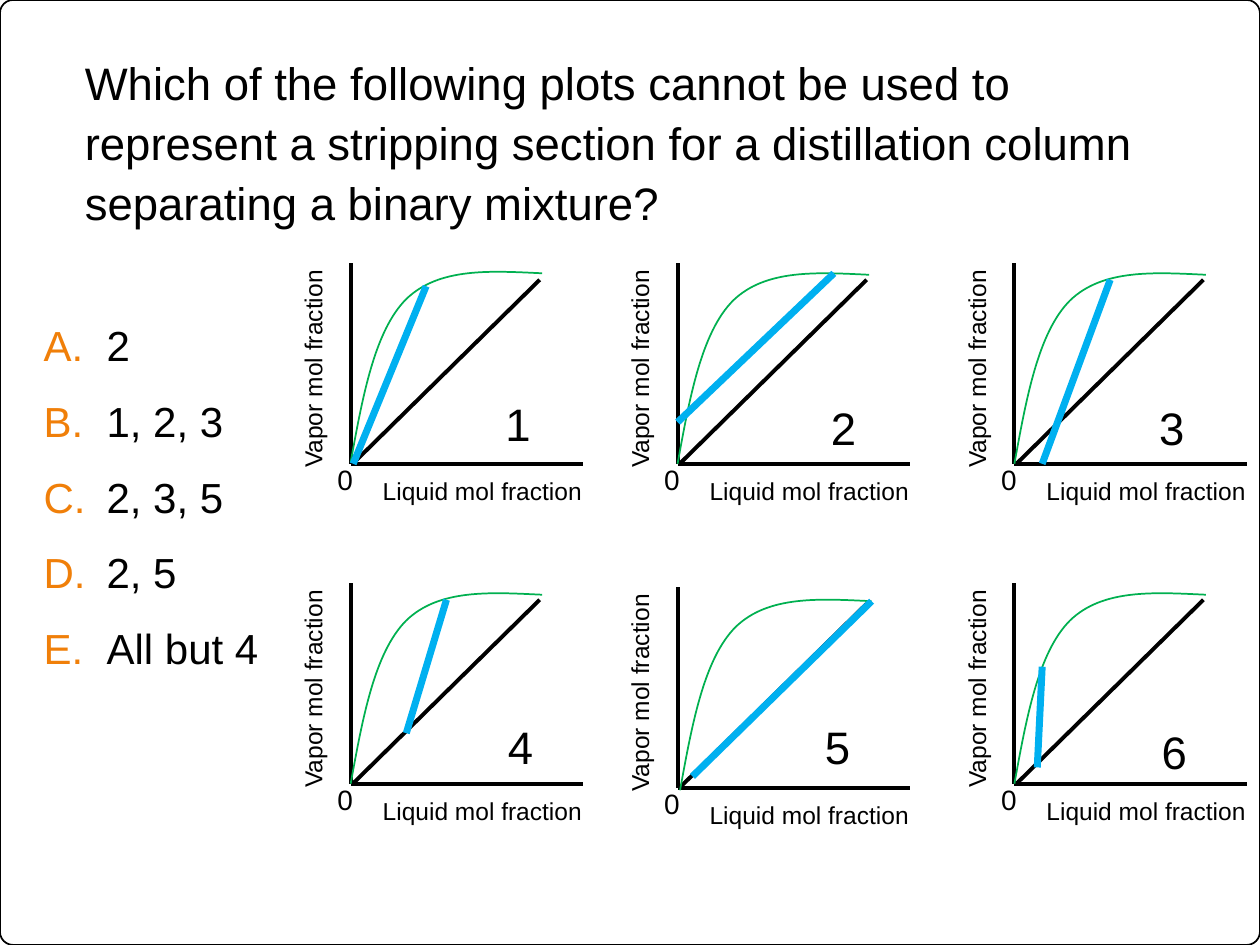
from dataclasses import dataclass

from lxml.etree import SubElement
from pptx import Presentation
from pptx.dml.color import RGBColor
from pptx.enum.shapes import MSO_CONNECTOR, MSO_SHAPE
from pptx.enum.text import MSO_AUTO_SIZE, PP_ALIGN
from pptx.oxml.ns import qn
from pptx.util import Cm, Pt

BLACK = RGBColor(0x00, 0x00, 0x00)
GREEN = RGBColor(0x00, 0xB0, 0x50)
BLUE = RGBColor(0x00, 0xB0, 0xF0)
ORANGE = RGBColor(0xF0, 0x7F, 0x09)
FONT = "Arial"

QUESTION = (
    "Which of the following plots cannot be used to represent a stripping "
    "section for a distillation column separating a binary mixture?"
)
ANSWERS = ["2", "1, 2, 3", "2, 3, 5", "2, 5", "All but 4"]
CURVE_TOP = -3.81
CURVE_SEGMENTS = [
    [(0.24, -1.32), (0.48, -2.65), (1.12, -3.29)],
    [(1.78, -3.93), (2.82, -3.86), (3.86, CURVE_TOP)],
]


@dataclass
class Plot:
    """One numbered plot; inner positions are in cm from its origin."""

    number: str
    origin: tuple
    line_top: tuple
    line_bottom: tuple
    number_at: tuple
    curve_at: tuple = (0, 0)


PLOTS = [
    Plot("1", (7.07, 9.35), (1.52, -3.58), (0.05, 0), (2.87, -1.5), (0, -0.03)),
    Plot("2", (13.66, 9.35), (3.15, -3.84), (0, -0.84), (2.84, -1.42)),
    Plot("3", (20.45, 9.35), (1.93, -3.71), (0.56, 0), (2.67, -1.42)),
    Plot("4", (7.07, 15.8), (1.93, -3.71), (1.12, -1.02), (2.92, -1.42)),
    Plot("5", (13.66, 15.88), (3.91, -3.76), (0.3, -0.23), (2.72, -1.5), (0.05, 0.05)),
    Plot("6", (20.45, 15.8), (0.56, -2.36), (0.46, -0.33), (2.72, -1.32)),
]


def shifted(origin, offset):
    """Return a point in cm at an offset from the origin."""
    return origin[0] + offset[0], origin[1] + offset[1]


def add_text(shapes, text, at, size, points, align=None, wrap=True):
    """Add a text box with black text that grows to fit and return it."""
    box = shapes.add_textbox(Cm(at[0]), Cm(at[1]), Cm(size[0]), Cm(size[1]))
    frame = box.text_frame
    frame.word_wrap = wrap
    frame.auto_size = MSO_AUTO_SIZE.SHAPE_TO_FIT_TEXT
    frame.text = text
    for paragraph in frame.paragraphs:
        paragraph.alignment = align
        for span in paragraph.runs:
            span.font.name = FONT
            span.font.size = Pt(points)
            span.font.color.rgb = BLACK
    return box


def add_line(shapes, start, end, color, width):
    """Add a straight line between two points in cm."""
    line = shapes.add_connector(
        MSO_CONNECTOR.STRAIGHT, Cm(start[0]), Cm(start[1]), Cm(end[0]), Cm(end[1])
    )
    line.line.color.rgb = color
    line.line.width = Pt(width)
    SubElement(line._element.spPr, qn("a:effectLst"))


def style_outline(shape, color):
    """Give a shape a thin outline without fill or shadow."""
    shape.shadow.inherit = False
    shape.fill.background()
    shape.line.color.rgb = color
    shape.line.width = Pt(1)


def add_frame(page):
    """Outline the whole slide with a rounded rectangle."""
    frame = page.shapes.add_shape(MSO_SHAPE.ROUNDED_RECTANGLE, 0, 0, Cm(25.4), Cm(19.05))
    frame.adjustments[0] = 0.014
    style_outline(frame, BLACK)


def set_spacing(box, spacing):
    """Fix the size of a box, remove its insets and set its line spacing."""
    frame = box.text_frame
    frame.auto_size = MSO_AUTO_SIZE.NONE
    frame.margin_left = frame.margin_right = frame.margin_top = frame.margin_bottom = 0
    for paragraph in frame.paragraphs:
        paragraph.line_spacing = spacing


def add_letters(box):
    """Number the paragraphs of a box with orange capital letters."""
    for paragraph in box.text_frame.paragraphs:
        properties = paragraph._p.get_or_add_pPr()
        properties.set("marL", str(Cm(1.27)))
        properties.set("indent", str(-Cm(1.27)))
        color = SubElement(properties, qn("a:buClr"))
        SubElement(color, qn("a:srgbClr"), val=str(ORANGE))
        SubElement(properties, qn("a:buFont"), typeface=FONT)
        SubElement(properties, qn("a:buAutoNum"), type="alphaUcPeriod")


def add_curve(shapes, origin):
    """Draw the equilibrium curve as two Bezier segments from the origin."""
    anchors = [shifted(origin, segment[-1]) for segment in CURVE_SEGMENTS]
    builder = shapes.build_freeform(Cm(origin[0]), Cm(origin[1]))
    builder.add_line_segments([(Cm(x), Cm(y)) for x, y in anchors], close=False)
    curve = builder.convert_to_shape()
    style_outline(curve, GREEN)
    straights = list(curve._element.iter(qn("a:lnTo")))
    for straight, segment in zip(straights, CURVE_SEGMENTS):
        outline = straight.getparent()
        bend = SubElement(outline, qn("a:cubicBezTo"))
        for x, y in segment:
            SubElement(bend, qn("a:pt"), x=str(Cm(x)), y=str(Cm(y - CURVE_TOP)))
        outline.remove(straight)


def add_axes(page, origin):
    """Add a group with both axes, their titles and the zero."""
    shapes = page.shapes.add_group_shape().shapes
    add_line(shapes, shifted(origin, (0, -4.04)), origin, BLACK, 2.25)
    add_line(shapes, origin, shifted(origin, (4.68, 0)), BLACK, 2.25)
    add_text(shapes, "Liquid mol fraction", shifted(origin, (0.05, 0.13)),
             (5.21, 0.86), 14, PP_ALIGN.CENTER)
    vapor = add_text(shapes, "Vapor mol fraction", shifted(origin, (-3.12, -2.34)),
                     (4.72, 0.86), 14, PP_ALIGN.CENTER)
    vapor.rotation = 270
    add_text(shapes, "0", shifted(origin, (-0.52, -0.15)), (0.84, 0.94), 16, wrap=False)


def add_plot(page, plot):
    """Add one plot with diagonal, curve, operating line and number."""
    shapes, origin = page.shapes, plot.origin
    add_line(shapes, shifted(origin, (0.04, 0)), shifted(origin, (3.81, -3.71)), BLACK, 2.25)
    add_axes(page, origin)
    add_curve(shapes, shifted(origin, plot.curve_at))
    add_line(shapes, shifted(origin, plot.line_top), shifted(origin, plot.line_bottom), BLUE, 4)
    add_text(shapes, plot.number, shifted(origin, plot.number_at), (1.14, 1.37), 26)


def main():
    """Build the slide and save it."""
    deck = Presentation()
    deck.slide_width, deck.slide_height = Cm(25.4), Cm(19.05)
    page = deck.slides.add_slide(deck.slide_layouts[6])
    add_frame(page)
    question = add_text(page.shapes, QUESTION, (1.71, 0.99), (22.33, 4.06), 26)
    set_spacing(question, 1.1)
    answers = add_text(page.shapes, "\n".join(ANSWERS), (0.88, 5.94), (6.65, 8.64), 24)
    set_spacing(answers, 1.5)
    add_letters(answers)
    for plot in PLOTS:
        add_plot(page, plot)
    deck.save("out.pptx")


if __name__ == "__main__":
    main()
